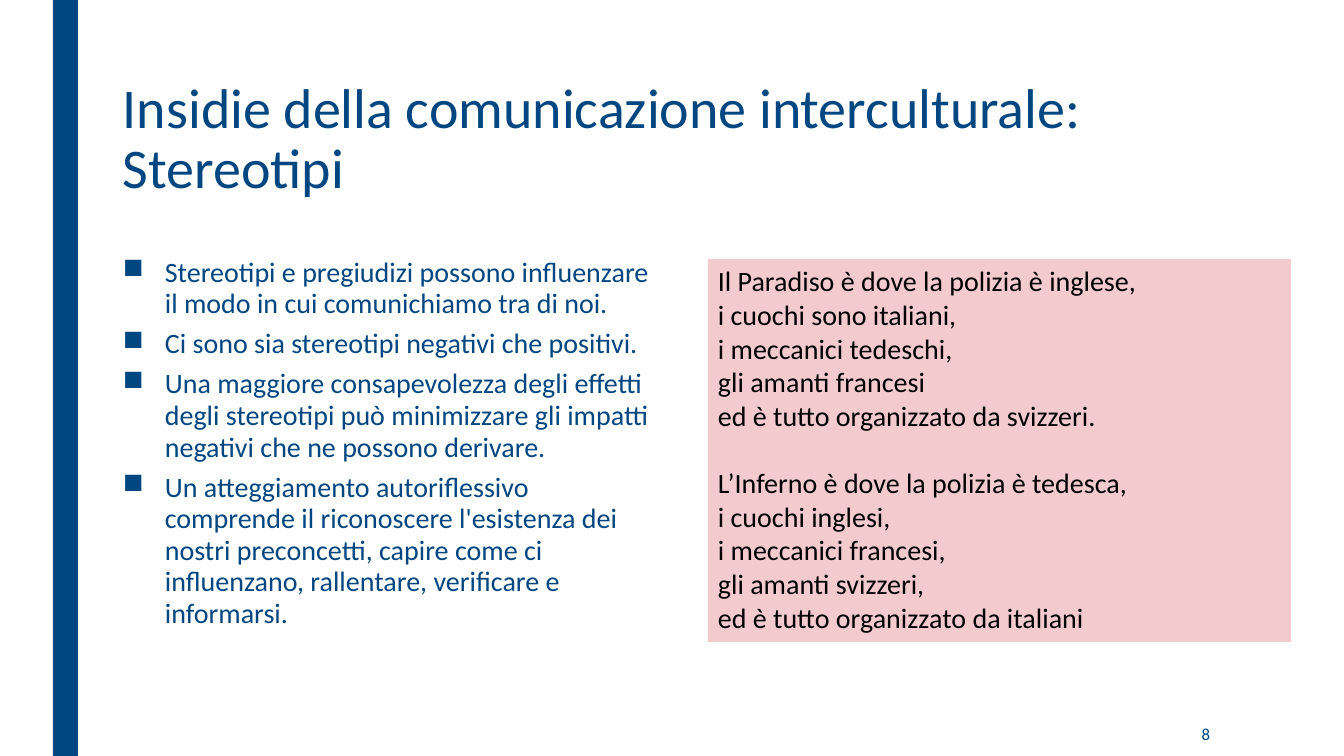
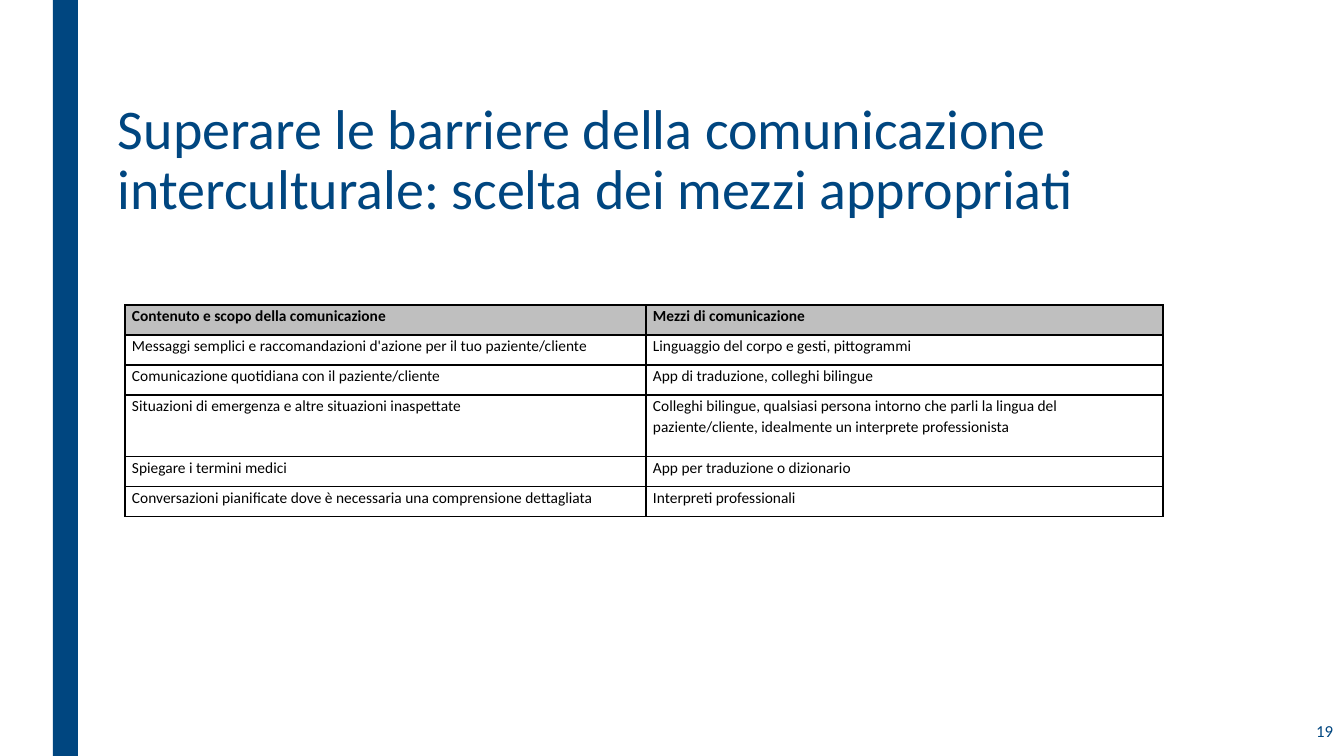
from dataclasses import dataclass

from lxml import etree
from pptx import Presentation
from pptx.dml.color import RGBColor
from pptx.enum.shapes import MSO_SHAPE
from pptx.enum.text import MSO_ANCHOR, PP_ALIGN
from pptx.oxml.ns import qn
from pptx.util import Emu, Pt

RECTANGLE = MSO_SHAPE.RECTANGLE
TOP, MIDDLE = MSO_ANCHOR.TOP, MSO_ANCHOR.MIDDLE
LEFT, RIGHT = PP_ALIGN.LEFT, PP_ALIGN.RIGHT

SLIDE_WIDTH, SLIDE_HEIGHT = 1344, 756
EMU_PER_PX = 12192000 / SLIDE_WIDTH
FONT = "Calibri"
COLORS = {"navy": "004680", "pink": "F3CBCF", "grey": "BFBFBF", "black": "000000"}
BULLET_INDENT = 42
CELL_MARGIN = 7


@dataclass(frozen=True)
class Box:
    left: int
    top: int
    width: int
    height: int


@dataclass(frozen=True)
class TextStyle:
    size: int
    color: str = "navy"
    bold: bool = False
    align: PP_ALIGN = LEFT
    line_spacing: float | Pt = 1.0
    space_after: int = 0
    bullet: str = ""


BAND = Box(53, 0, 25, SLIDE_HEIGHT)
TITLE = TextStyle(40, line_spacing=0.89)
BULLETS = TextStyle(20, line_spacing=0.94, space_after=6, bullet="■")
QUOTE = TextStyle(20, "black")
PAGE_NUMBER = TextStyle(12, align=RIGHT)
CELL = TextStyle(11, "black", line_spacing=Pt(15), space_after=6)
HEADER_CELL = TextStyle(11, "black", bold=True, line_spacing=Pt(15), space_after=6)

STEREOTYPE_POINTS = [
    "Stereotipi e pregiudizi possono influenzare il modo in cui comunichiamo tra di noi.",
    "Ci sono sia stereotipi negativi che positivi.",
    "Una maggiore consapevolezza degli effetti degli stereotipi può minimizzare "
    "gli impatti negativi che ne possono derivare.",
    "Un atteggiamento autoriflessivo comprende il riconoscere l'esistenza dei nostri "
    "preconcetti, capire come ci influenzano, rallentare, verificare e informarsi.",
]
PARADISE = [
    "Il Paradiso è dove la polizia è inglese,",
    "i cuochi sono italiani,",
    "i meccanici tedeschi,",
    "gli amanti francesi",
    "ed è tutto organizzato da svizzeri.",
]
HELL = [
    "L’Inferno è dove la polizia è tedesca,",
    "i cuochi inglesi,",
    "i meccanici francesi,",
    "gli amanti svizzeri,",
    "ed è tutto organizzato da italiani",
]
MEDIA_COLUMNS = [521, 517]
MEDIA_ROW_HEIGHTS = [30, 30, 30, 62, 30, 30]
MEDIA_ROWS = [
    ("Contenuto e scopo della comunicazione", "Mezzi di comunicazione"),
    ("Messaggi semplici e raccomandazioni d'azione per il tuo paziente/cliente",
     "Linguaggio del corpo e gesti, pittogrammi"),
    ("Comunicazione quotidiana con il paziente/cliente",
     "App di traduzione, colleghi bilingue"),
    ("Situazioni di emergenza e altre situazioni inaspettate",
     "Colleghi bilingue, qualsiasi persona intorno che parli la lingua del "
     "paziente/cliente, idealmente un interprete professionista"),
    ("Spiegare i termini medici", "App per traduzione o dizionario"),
    ("Conversazioni pianificate dove è necessaria una comprensione dettagliata",
     "Interpreti professionali"),
]


def px(length: int) -> Emu:
    return Emu(round(length * EMU_PER_PX))


def place(box: Box) -> tuple[Emu, Emu, Emu, Emu]:
    return px(box.left), px(box.top), px(box.width), px(box.height)


def rgb(name: str) -> RGBColor:
    return RGBColor.from_string(COLORS[name])


# Text
def add_bullet(paragraph, character: str) -> None:
    properties = paragraph._p.get_or_add_pPr()
    properties.set("marL", str(px(BULLET_INDENT)))
    properties.set("indent", str(-px(BULLET_INDENT)))
    etree.SubElement(properties, qn("a:buChar"), char=character)


def write(frame, lines: list[str], style: TextStyle, anchor: MSO_ANCHOR = TOP) -> None:
    frame.word_wrap = True
    frame.vertical_anchor = anchor
    for index, line in enumerate(lines):
        paragraph = frame.paragraphs[0] if index == 0 else frame.add_paragraph()
        paragraph.text = line
        paragraph.alignment = style.align
        paragraph.line_spacing = style.line_spacing
        paragraph.space_after = Pt(style.space_after)
        if style.bullet:
            add_bullet(paragraph, style.bullet)
        font = paragraph.font
        font.name, font.size, font.bold = FONT, Pt(style.size), style.bold
        font.color.rgb = rgb(style.color)


def add_text(slide, box: Box, lines: list[str], style: TextStyle,
             anchor: MSO_ANCHOR = TOP) -> None:
    write(slide.shapes.add_textbox(*place(box)).text_frame, lines, style, anchor)


# Shapes
def add_rectangle(slide, box: Box, color: str):
    shape = slide.shapes.add_shape(RECTANGLE, *place(box))
    shape.shadow.inherit = False
    shape.fill.solid()
    shape.fill.fore_color.rgb = rgb(color)
    shape.line.fill.background()
    return shape


# Table
def add_borders(cell) -> None:
    properties = cell._tc.get_or_add_tcPr()
    for side in ("lnL", "lnR", "lnT", "lnB"):
        line = etree.SubElement(properties, qn(f"a:{side}"), w=str(Pt(1)))
        fill = etree.SubElement(line, qn("a:solidFill"))
        etree.SubElement(fill, qn("a:srgbClr"), val=COLORS["black"])


def add_media_table(slide, left: int, top: int) -> None:
    box = Box(left, top, sum(MEDIA_COLUMNS), sum(MEDIA_ROW_HEIGHTS))
    table = slide.shapes.add_table(
        len(MEDIA_ROWS), len(MEDIA_COLUMNS), *place(box)).table
    table.horz_banding = False
    for column, width in zip(table.columns, MEDIA_COLUMNS):
        column.width = px(width)
    for row_index, (row, height) in enumerate(zip(table.rows, MEDIA_ROW_HEIGHTS)):
        row.height = px(height)
        is_header = row_index == 0
        for cell, text in zip(row.cells, MEDIA_ROWS[row_index]):
            cell.margin_left = cell.margin_right = px(CELL_MARGIN)
            cell.margin_top = cell.margin_bottom = 0
            write(cell.text_frame, [text], HEADER_CELL if is_header else CELL)
            add_borders(cell)
            if is_header:
                cell.fill.solid()
                cell.fill.fore_color.rgb = rgb("grey")
            else:
                cell.fill.background()


# Slides
def add_slide(presentation, title: str, title_box: Box, number: int, number_box: Box):
    slide = presentation.slides.add_slide(presentation.slide_layouts[6])
    add_rectangle(slide, BAND, "navy")
    add_text(slide, title_box, [title], TITLE)
    add_text(slide, number_box, [str(number)], PAGE_NUMBER, MIDDLE)
    return slide


def build_stereotypes(presentation) -> None:
    slide = add_slide(
        presentation, "Insidie della comunicazione interculturale: Stereotipi",
        Box(113, 76, 1156, 163), 8, Box(1044, 712, 176, 44))
    add_text(slide, Box(113, 252, 559, 395), STEREOTYPE_POINTS, BULLETS)
    quote = add_rectangle(slide, Box(708, 259, 583, 383), "pink").text_frame
    write(quote, PARADISE + HELL, QUOTE)
    quote.paragraphs[len(PARADISE)].space_before = Pt(24)


def build_media_choice(presentation) -> None:
    slide = add_slide(
        presentation,
        "Superare le barriere della comunicazione interculturale: "
        "scelta dei mezzi appropriati",
        Box(108, 97, 1156, 192), 19, Box(1167, 709, 176, 44))
    add_media_table(slide, 125, 305)


def main() -> None:
    presentation = Presentation()
    presentation.slide_width = px(SLIDE_WIDTH)
    presentation.slide_height = px(SLIDE_HEIGHT)
    build_stereotypes(presentation)
    build_media_choice(presentation)
    presentation.save("out.pptx")


if __name__ == "__main__":
    main()
